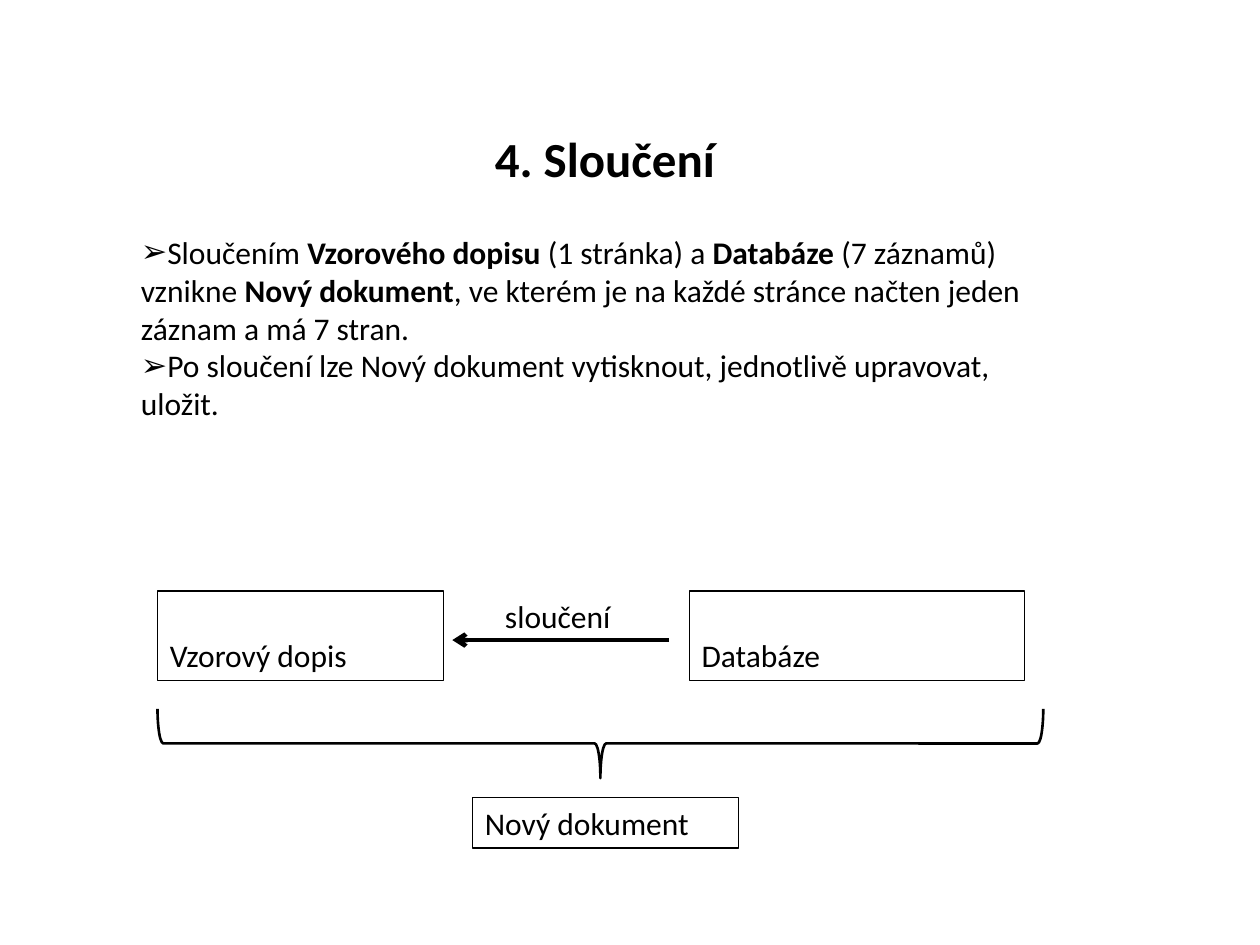
from lxml import etree
from pptx import Presentation, util as u
from pptx.dml.color import RGBColor
from pptx.enum import shapes as sh, text as tx
from pptx.oxml import ns

COLS, ROWS = 100, 75
FONT = "Calibri"
INK = {"main": "000000"}

deck = Presentation()
deck.slide_width, deck.slide_height = u.Inches(10), u.Inches(7.5)
COL, ROW = deck.slide_width / COLS, deck.slide_height / ROWS


def scale(x, y, w, h):
    return [round(n * s) for n, s in zip((x, y, w, h), (COL, ROW) * 2)]


def within(box, x, y, w, h):
    return box[0] + x, box[1] + y, w, h


def hue(name):
    return RGBColor.from_string(INK[name])


def style(run, size=18, bold=False):
    run.font.name, run.font.size, run.font.bold = FONT, u.Pt(size), bold
    run.font.color.rgb = hue("main")


def stroke(shape, width):
    shape.line.color.rgb = hue("main")
    shape.line.width = u.Pt(width)


def label(slide, box, words, size=18, bold=False, anchor="TOP", align="LEFT"):
    item = slide.shapes.add_textbox(*scale(*box))
    frame = item.text_frame
    frame.word_wrap = True
    frame.vertical_anchor = tx.MSO_ANCHOR[anchor]
    frame.text = words
    para = frame.paragraphs[0]
    para.alignment = tx.PP_ALIGN[align]
    style(para.runs[0], size, bold)
    return item


def framed(slide, box, words):
    item = label(slide, box, words, anchor="BOTTOM")
    stroke(item, 0.75)


def title(slide, box):
    label(slide, box, "4. Sloučení", 28, True, "MIDDLE", "CENTER")


def bullets(slide, box, items):
    frame = slide.shapes.add_textbox(*scale(*box)).text_frame
    frame.word_wrap = True
    for i, parts in enumerate(items):
        para = frame.add_paragraph() if i else frame.paragraphs[0]
        props = para._p.get_or_add_pPr()
        etree.SubElement(props, ns.qn("a:buFont")).set("typeface", "Arial")
        etree.SubElement(props, ns.qn("a:buChar")).set("char", "➢")
        for j, part in enumerate(parts):
            run = para.add_run()
            run.text = part
            style(run, bold=j % 2 == 1)


def arrow(slide, box):
    x, y, w, h = scale(*box)
    line = slide.shapes.add_connector(sh.MSO_CONNECTOR.STRAIGHT, x + w, y, x, y + h)
    stroke(line, 2.5)
    tail = etree.SubElement(line.line._get_or_add_ln(), ns.qn("a:tailEnd"))
    tail.set("type", "arrow")
    etree.SubElement(line._element.spPr, ns.qn("a:effectLst"))


def brace(slide, box):
    x, y, w, h = box
    turned = x + (w - h) / 2, y + (h - w) / 2, h, w
    item = slide.shapes.add_shape(sh.MSO_SHAPE.RIGHT_BRACE, *scale(*turned))
    item.rotation = 90
    item.adjustments[0], item.adjustments[1] = 0.083, 0.5
    item.shadow.inherit = False
    item.fill.background()
    stroke(item, 1.5)


def merge(slide, box):
    wide = box[2]
    framed(slide, within(box, 0, 0, 22.7, 7.1), "Vzorový dopis")
    framed(slide, within(box, 42.2, 0, 26.6, 7.1), "Databáze")
    arrow(slide, within(box, 23.4, 3.9, 17.2, 0))
    label(slide, within(box, 26.6, 0, 11.7, 4), "sloučení")
    brace(slide, within(box, 0, 9.35, wide, 5.5))
    framed(slide, within(box, 25, 16.4, 21.1, 4), "Nový dokument")


def main():
    slide = deck.slides.add_slide(deck.slide_layouts[6])
    title(slide, (5.5, 7.8, 85, 9.4))
    bullets(slide, (10.2, 18, 75.8, 16.2), [
        ["Sloučením ", "Vzorového dopisu ", "(1 stránka) a ", "Databáze",
         " (7 záznamů) vznikne ", "Nový dokument",
         ", ve kterém je na každé stránce načten jeden záznam a má 7 stran."],
        ["Po sloučení lze Nový dokument vytisknout, jednotlivě upravovat, uložit."],
    ])
    merge(slide, (12.5, 46.9, 70.3, 20.4))
    deck.save("out.pptx")


if __name__ == "__main__":
    main()
